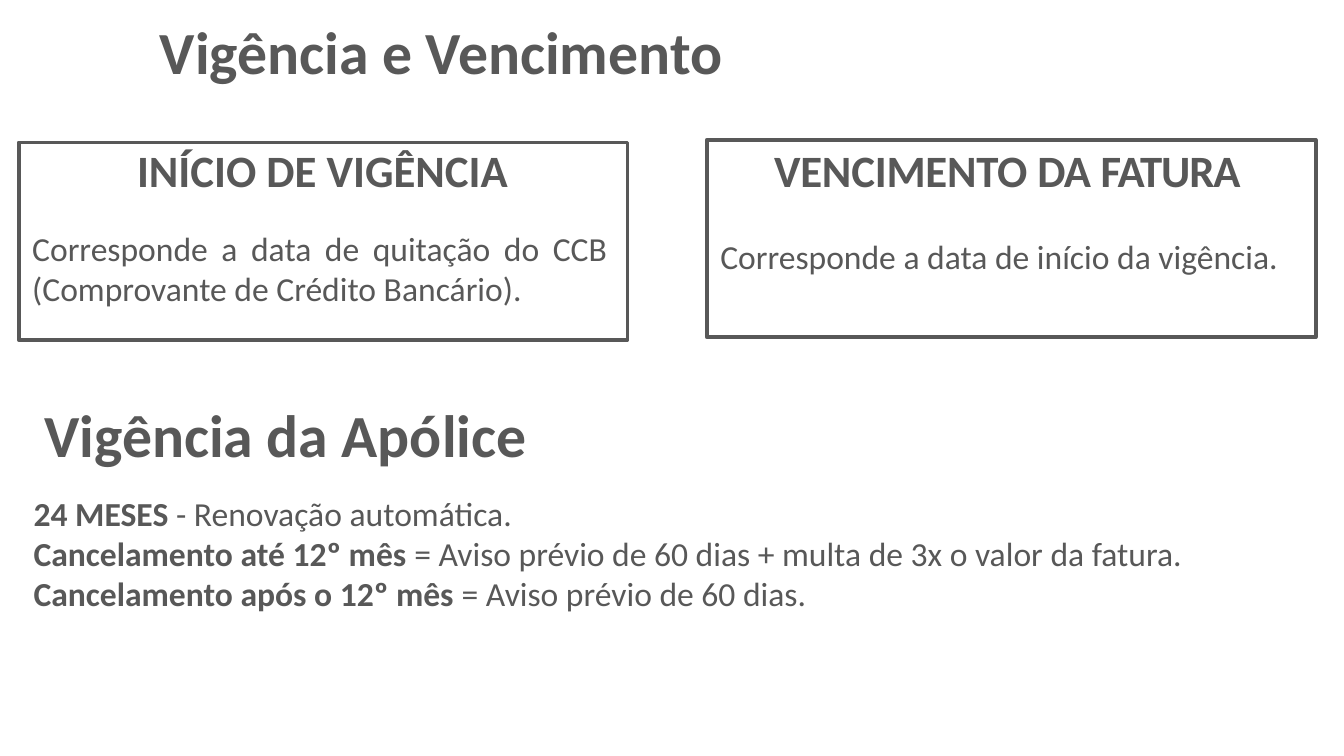
from dataclasses import dataclass

from pptx import Presentation
from pptx.dml.color import RGBColor
from pptx.enum.shapes import MSO_SHAPE
from pptx.enum.text import MSO_ANCHOR, PP_ALIGN
from pptx.util import Inches, Pt

RECT = MSO_SHAPE.RECTANGLE
TOP, MIDDLE = MSO_ANCHOR.TOP, MSO_ANCHOR.MIDDLE
LEFT, JUSTIFY = PP_ALIGN.LEFT, PP_ALIGN.JUSTIFY


@dataclass(frozen=True)
class Theme:
    ink: RGBColor = RGBColor(0x58, 0x58, 0x58)
    font: str = "Calibri"
    title: int = 32
    heading: int = 24
    body: int = 18
    border: int = 2


THEME = Theme()


def add_run(p, text, size=THEME.body, bold=False, tracking=0):
    r = p.add_run()
    r.text = text
    r.font.name, r.font.size, r.font.bold = THEME.font, Pt(size), bold
    r.font.color.rgb = THEME.ink
    if tracking:  # letter spacing, in hundredths of a point
        r._r.get_or_add_rPr().set("spc", str(round(tracking * 100)))


def add_paragraph(tf, *runs, first=False, before=0, indent=0.0, right=0.0,
                  align=LEFT):
    """Each run is a (text, format) pair."""
    p = tf.paragraphs[0] if first else tf.add_paragraph()
    p.alignment = align
    p.space_before = Pt(before)
    pPr = p._p.get_or_add_pPr()
    pPr.set("marL", str(Inches(indent)))
    pPr.set("marR", str(Inches(right)))
    pPr.set("indent", "0")
    for text, style in runs:
        add_run(p, text, **style)


def setup_frame(sp, top, anchor=TOP):
    tf = sp.text_frame
    tf.word_wrap = True
    tf.vertical_anchor = anchor
    tf.margin_left = tf.margin_right = tf.margin_bottom = 0
    tf.margin_top = Inches(top)
    return tf


def add_text(s, x, y, w, h, top=0.01, anchor=TOP):
    sp = s.shapes.add_textbox(Inches(x), Inches(y), Inches(w), Inches(h))
    return setup_frame(sp, top, anchor)


def add_card(s, x, y, top, heading, indent, body, before):
    sp = s.shapes.add_shape(RECT, Inches(x), Inches(y), Inches(4.53), Inches(1.47))
    sp.shadow.inherit = False
    sp.fill.background()
    sp.line.color.rgb = THEME.ink
    sp.line.width = Pt(THEME.border)
    tf = setup_frame(sp, top)
    add_paragraph(tf, *heading, first=True, indent=indent)
    add_paragraph(tf, (body, {}), before=before, indent=0.1, right=0.15,
                  align=JUSTIFY)


def main():
    # Slide in 16:9
    prs = Presentation()
    prs.slide_width = Inches(10)
    prs.slide_height = prs.slide_width * 9 // 16
    s = prs.slides.add_slide(prs.slide_layouts[6])

    title = {"size": THEME.title, "bold": True}
    heading = {"size": THEME.heading, "bold": True}
    strong = {"bold": True}

    # Title
    tf = add_text(s, 1.18, 0.08, 4.21, 0.56, top=0.04, anchor=MIDDLE)
    add_paragraph(tf, ("Vigência e Vencimento", title), first=True, indent=0.01)

    # Definition cards
    add_card(s, 0.14, 1.06, 0, [("INÍCIO DE VIGÊNCIA", heading)], 0.88,
             "Corresponde a data de quitação do CCB "
             "(Comprovante de Crédito Bancário).", 17)
    add_card(s, 5.26, 1.04, 0.02,
             [("VENCIMENTO ", {**heading, "tracking": -0.1}),
              ("DA ", {**heading, "tracking": -0.3}),
              ("FATURA", {**heading, "tracking": -0.6})], 0.5,
             "Corresponde a data de início da vigência.", 21.5)

    # Policy term
    tf = add_text(s, 0.24, 2.64, 8.59, 1.94, top=0.32)
    add_paragraph(tf, ("Vigência da Apólice", title), first=True, indent=0.09)
    terms = [
        ("24 MESES ", "- Renovação automática."),
        ("Cancelamento até 12º mês ",
         "= Aviso prévio de 60 dias + multa de 3x o valor da fatura."),
        ("Cancelamento após o 12º mês ", "= Aviso prévio de 60 dias."),
    ]
    for i, (label, rule) in enumerate(terms):
        add_paragraph(tf, (label, strong), (rule, {}), indent=0.01,
                      before=0 if i else 12.4)

    prs.save("out.pptx")


if __name__ == "__main__":
    main()
